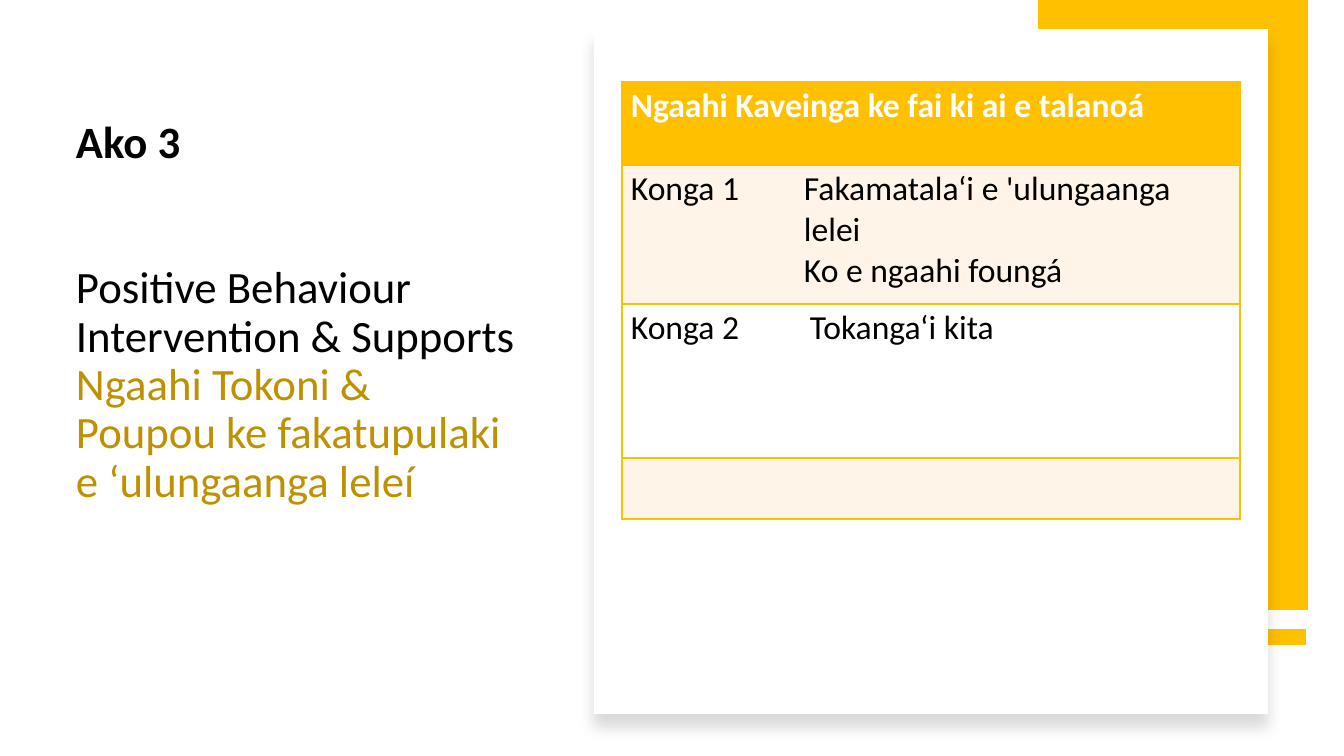
from lxml.etree import SubElement
from pptx import Presentation
from pptx.dml.color import RGBColor
from pptx.enum.shapes import MSO_CONNECTOR, MSO_SHAPE
from pptx.enum.text import MSO_ANCHOR, MSO_AUTO_SIZE, PP_ALIGN
from pptx.oxml import parse_xml
from pptx.oxml.ns import nsdecls, qn
from pptx.util import Emu, Pt

SLIDE_WIDTH, SLIDE_HEIGHT = 1344, 756
EMU_PER_PX = 12192000 / SLIDE_WIDTH
GOLD, DARK_GOLD, CREAM = "FFC000", "BF9000", "FFF4E7"
WHITE, BLACK = "FFFFFF", "000000"


def px(length):
    return Emu(round(length * EMU_PER_PX))


def color(hex_value):
    return RGBColor.from_string(hex_value)


def set_attributes(target, values):
    for name, value in values.items():
        setattr(target, name, value)


def add_run(paragraph, text, size, hex_value, bold=False):
    run = paragraph.add_run()
    run.text = text
    set_attributes(run.font, {"name": "Calibri", "size": Pt(size), "bold": bold})
    run.font.color.rgb = color(hex_value)


def add_rectangle(slide, box, hex_value):
    shape = slide.shapes.add_shape(MSO_SHAPE.RECTANGLE, *map(px, box))
    shape.shadow.inherit = False
    shape.fill.solid()
    shape.fill.fore_color.rgb = color(hex_value)
    shape.line.fill.background()
    return shape


def add_title(slide, left, top, width, height):
    title = slide.shapes.title
    set_attributes(title, {"left": px(left), "top": px(top),
                           "width": px(width), "height": px(height)})
    frame = title.text_frame
    set_attributes(frame, {
        "word_wrap": True, "auto_size": MSO_AUTO_SIZE.NONE,
        "vertical_anchor": MSO_ANCHOR.BOTTOM,
        "margin_left": px(9), "margin_right": px(9),
        "margin_top": px(5), "margin_bottom": px(102)})
    lines = [
        ("Ako 3", BLACK, True, 69),
        ("Positive Behaviour Intervention & Supports", BLACK, False, 0),
        ("Ngaahi Tokoni & Poupou ke fakatupulaki e ‘ulungaanga leleí",
         DARK_GOLD, False, 0),
    ]
    for index, (text, hex_value, bold, gap) in enumerate(lines):
        paragraph = frame.add_paragraph() if index else frame.paragraphs[0]
        set_attributes(paragraph, {
            "alignment": PP_ALIGN.LEFT, "line_spacing": 0.9,
            "space_before": Pt(0), "space_after": Pt(gap)})
        add_run(paragraph, text, 32, hex_value, bold)


def add_gold_frame(slide, left, top, width, height):
    """Place the gold block and the bar just below it."""
    bar_y = px(top + height + 27)
    bar = slide.shapes.add_connector(
        MSO_CONNECTOR.STRAIGHT, px(left + width - 2), bar_y, px(left), bar_y)
    bar.line.color.rgb = color(GOLD)
    bar.line.width = Pt(12)
    SubElement(bar._element.spPr, qn("a:effectLst"))
    add_rectangle(slide, (left, top, width, height), GOLD)


def add_card(slide, box):
    """Place the white card with a soft shadow below it."""
    card = add_rectangle(slide, box, WHITE)
    effects = card._element.spPr.find(qn("a:effectLst"))
    effects.append(parse_xml(
        f'<a:outerShdw {nsdecls("a")} blurRad="{Pt(11)}" dist="{Pt(10)}" '
        'dir="5400000" algn="t" rotWithShape="0">'
        f'<a:srgbClr val="{BLACK}"><a:alpha val="15000"/></a:srgbClr>'
        '</a:outerShdw>'))


def set_borders(cell, hidden_side=None):
    """Draw gold borders on every side but the hidden one."""
    properties = cell._tc.get_or_add_tcPr()
    for index, side in enumerate(("lnL", "lnR", "lnT", "lnB")):
        paint = ("<a:noFill/>" if side == hidden_side else
                 f'<a:solidFill><a:srgbClr val="{GOLD}"/></a:solidFill>')
        properties.insert(index, parse_xml(
            f'<a:{side} {nsdecls("a")} w="{Pt(1)}">{paint}</a:{side}>'))


def add_topics_table(slide, left, top, width):
    row_heights = [83, 139, 154, 61]
    column_widths = [173, width - 173]
    row_fills = [GOLD, CREAM, WHITE, CREAM]
    # Each cell: its lines of text, left margin, right margin
    empty = ([], 9, 9)
    rows = [
        [(["Ngaahi Kaveinga ke fai ki ai e talanoá"], 9, 9), empty],
        [(["Konga 1"], 9, 9),
         (["Fakamatala‘i e 'ulungaanga lelei", "Ko e ngaahi foungá"], 9, 30)],
        [(["Konga 2"], 9, 9), (["Tokanga‘i kita"], 15, 9)],
        [empty, empty],
    ]
    table = slide.shapes.add_table(
        len(rows), len(column_widths), px(left), px(top),
        px(width), px(sum(row_heights))).table
    for column, column_width in zip(table.columns, column_widths):
        column.width = px(column_width)
    for row_index, cells in enumerate(rows):
        table.rows[row_index].height = px(row_heights[row_index])
        is_header = row_index == 0
        for column_index, (lines, margin_left, margin_right) in enumerate(cells):
            cell = table.cell(row_index, column_index)
            set_attributes(cell, {
                "margin_left": px(margin_left), "margin_right": px(margin_right),
                "margin_top": px(4), "margin_bottom": px(4)})
            cell.fill.solid()
            cell.fill.fore_color.rgb = color(row_fills[row_index])
            inner_side = "lnL" if column_index else "lnR"
            set_borders(cell, None if is_header else inner_side)
            for index, text in enumerate(lines):
                frame = cell.text_frame
                paragraph = frame.add_paragraph() if index else frame.paragraphs[0]
                add_run(paragraph, text, 24, WHITE if is_header else BLACK, is_header)
    table.cell(0, 0).merge(table.cell(0, 1))


def main():
    presentation = Presentation()
    set_attributes(presentation, {"slide_width": px(SLIDE_WIDTH),
                                  "slide_height": px(SLIDE_HEIGHT)})
    slide = presentation.slides.add_slide(presentation.slide_layouts[5])
    add_title(slide, 67, 75, 460, 534)
    add_gold_frame(slide, 1038, 0, 270, 610)
    add_card(slide, (594, 29, 674, 685))
    add_topics_table(slide, 622, 82, 618)
    presentation.save("out.pptx")


if __name__ == "__main__":
    main()
